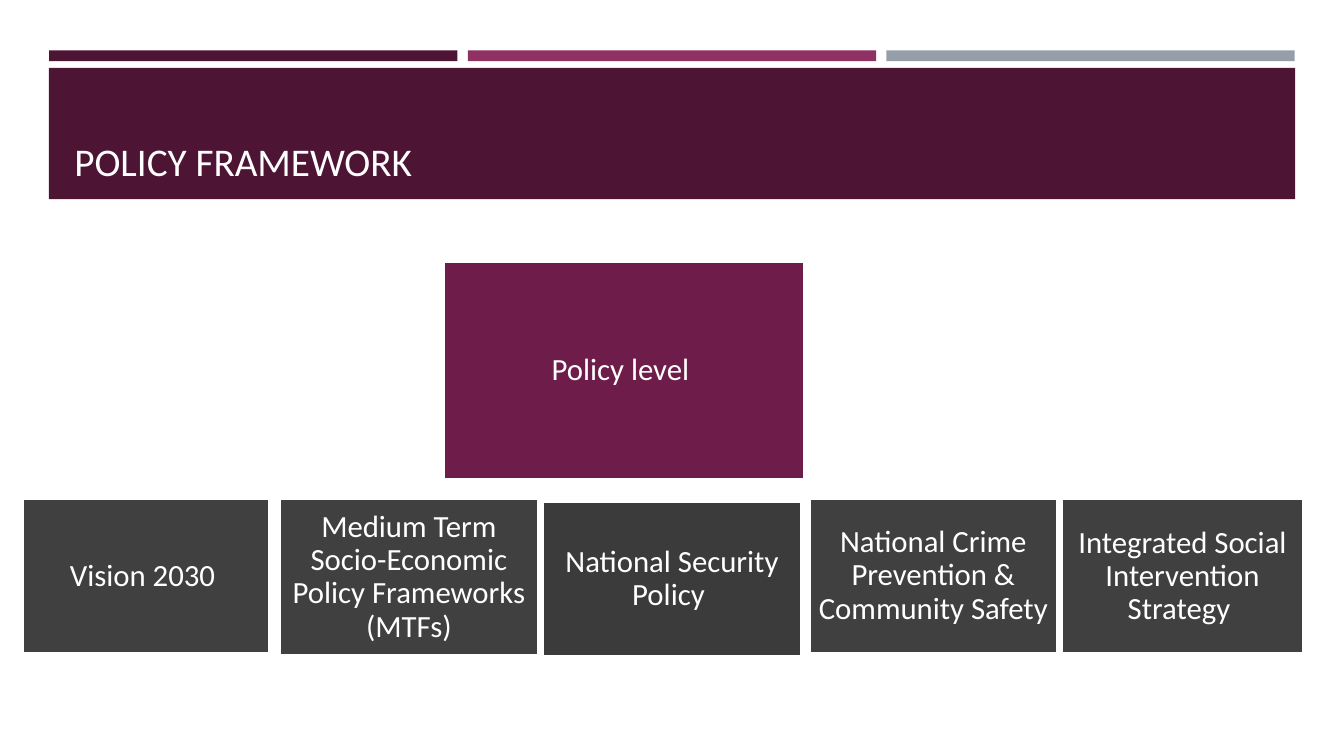
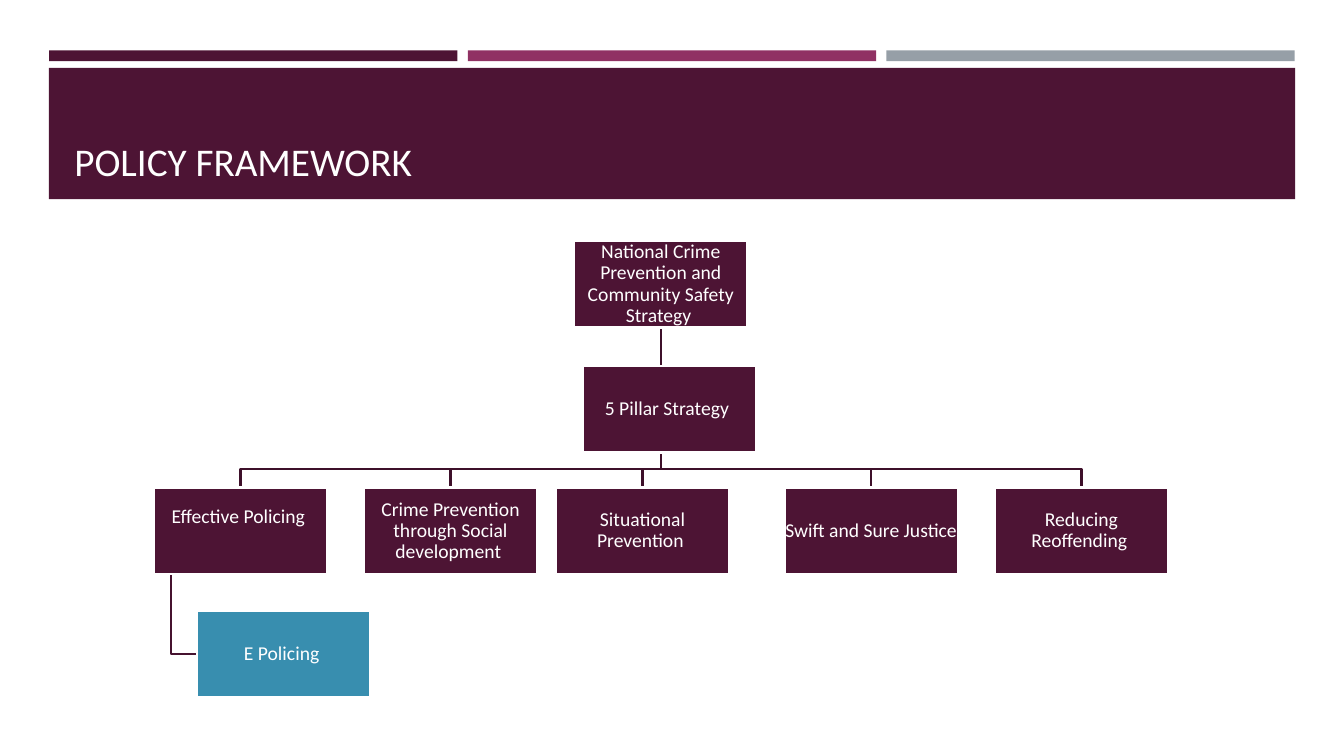
"""Build two policy framework slides: a policy overview and a strategy chart."""
from pptx import Presentation
from pptx.dml.color import RGBColor
from pptx.enum.shapes import MSO_SHAPE
from pptx.enum.text import MSO_ANCHOR, MSO_AUTO_SIZE, PP_ALIGN
from pptx.util import Cm, Pt

RECT = MSO_SHAPE.RECTANGLE
LEFT, CENTER = PP_ALIGN.LEFT, PP_ALIGN.CENTER
MIDDLE, BOTTOM = MSO_ANCHOR.MIDDLE, MSO_ANCHOR.BOTTOM
NO_FIT = MSO_AUTO_SIZE.NONE

COLORS = {
    "plum": "4D1434", "berry": "903163", "grey": "969FA7", "wine": "6E1D4A",
    "charcoal": "404040", "coal": "3B3B3B", "teal": "388EAF",
    "line": "3E102A", "branch": "46122F", "white": "FFFFFF",
}
FONT = "Calibri"
BOX_W, BOX_H = 4.37, 2.18


def rgb(name):
    return RGBColor.from_string(COLORS[name])


def write(tf, text, size=14, color="white", align=CENTER, anchor=MIDDLE, spacing=0.9):
    tf.word_wrap = True
    tf.auto_size = NO_FIT
    tf.vertical_anchor = anchor
    p = tf.paragraphs[0]
    p.alignment, p.line_spacing = align, spacing
    r = p.add_run()
    r.text = text
    r.font.name, r.font.size = FONT, Pt(size)
    r.font.color.rgb = rgb(color)


class Deck:
    def __init__(self):
        self.prs = Presentation()
        self.prs.slide_width, self.prs.slide_height = Cm(33.87), Cm(19.05)
        self.layout = self.prs.slide_layouts[5]
        self.s = None

    def slide(self, title):
        first = self.s is None
        self.s = self.prs.slides.add_slide(self.layout)
        if first:
            self.style_layout()
        write(self.s.shapes.title.text_frame, title, size=28, align=LEFT,
              anchor=BOTTOM, spacing=1)

    def style_layout(self):
        title, *footers = self.layout.placeholders
        for sp in footers:
            self.layout.shapes.element.remove(sp.element)
        title.left, title.top = Cm(1.62), Cm(1.96)
        title.width, title.height = Cm(30.63), Cm(2.82)
        bands = [self.rect(1.24 + 10.55 * i, 1.27, 10.29, 0.27, color)
                 for i, color in enumerate(("plum", "berry", "grey"))]
        bands.append(self.rect(1.23, 1.71, 31.41, 3.31, "plum"))
        for sp in bands:
            self.layout.shapes.element.insert(2, sp.element)

    def rect(self, x, y, w, h, fill):
        sp = self.s.shapes.add_shape(RECT, Cm(x), Cm(y), Cm(w), Cm(h))
        sp.shadow.inherit = False
        sp.fill.solid()
        sp.fill.fore_color.rgb = rgb(fill)
        sp.line.fill.background()
        return sp

    def outline(self, sp, color):
        sp.line.color.rgb = rgb(color)
        sp.line.width = Pt(1.75)

    def box(self, text, x, y, w=BOX_W, h=BOX_H, fill="plum", size=14, inset=0.02, lift=0):
        sp = self.rect(x, y, w, h, fill)
        self.outline(sp, "white")
        tf = sp.text_frame
        tf.margin_left = tf.margin_right = tf.margin_top = Cm(inset)
        tf.margin_bottom = Cm(inset + lift)
        write(tf, text, size=size)

    def elbow(self, points, color="line"):
        start, *rest = [(Cm(x), Cm(y)) for x, y in points]
        builder = self.s.shapes.build_freeform(*start)
        builder.add_line_segments(rest, close=False)
        sp = builder.convert_to_shape()
        sp.shadow.inherit = False
        sp.fill.background()
        self.outline(sp, color)


def policy_levels(deck):
    deck.slide("POLICY FRAMEWORK")
    cards = [
        ("Policy level ", 11.18, 6.6, 9.09, 5.47, "wine"),
        ("Vision 2030 ", 0.57, 12.57, 6.22, 3.9, "charcoal"),
        ("National Security Policy ", 13.68, 12.65, 6.51, 3.89, "coal"),
        ("Integrated Social Intervention Strategy ", 26.75, 12.58, 6.1, 3.89, "charcoal"),
        ("Medium Term Socio-Economic Policy Frameworks (MTFs)",
         7.05, 12.57, 6.51, 3.95, "charcoal"),
        ("National Crime Prevention & Community Safety ",
         20.4, 12.56, 6.24, 3.91, "charcoal"),
    ]
    for card in cards:
        deck.box(*card, size=22, inset=0.22)


def strategy_chart(deck):
    deck.slide("POLICY FRAMEWORK")
    root_x, root_y, pillar_y, bus_y = 14.47, 6.07, 12.29, 11.82
    branch_x, policing_x, policing_y = 4.31, 4.97, 15.39
    trunk_x, trunk_y = root_x + BOX_W / 2, root_y + BOX_H
    branch_y = policing_y + BOX_H / 2
    pillars = [
        ("Effective Policing ", 3.88, 0.71),
        ("Crime Prevention through Social development ", 9.17, 0),
        ("Situational Prevention ", 14.01, 0),
        ("Swift and Sure Justice ", 19.77, 0),
        ("Reducing Reoffending ", 25.07, 0),
    ]
    for _, x, _ in reversed(pillars):
        mid = x + BOX_W / 2
        deck.elbow([(trunk_x, trunk_y), (trunk_x, bus_y), (mid, bus_y), (mid, pillar_y)])
    deck.elbow([(branch_x, pillar_y + BOX_H), (branch_x, branch_y),
                (policing_x, branch_y)], "branch")

    deck.box("National Crime Prevention and Community Safety Strategy ", root_x, root_y)
    for text, x, lift in pillars:
        deck.box(text, x, pillar_y, lift=lift)
    deck.box("E Policing ", policing_x, policing_y, fill="teal")
    deck.box("5 Pillar Strategy ", 14.68, 9.22)


def main():
    deck = Deck()
    policy_levels(deck)
    strategy_chart(deck)
    deck.prs.save("out.pptx")


if __name__ == "__main__":
    main()
